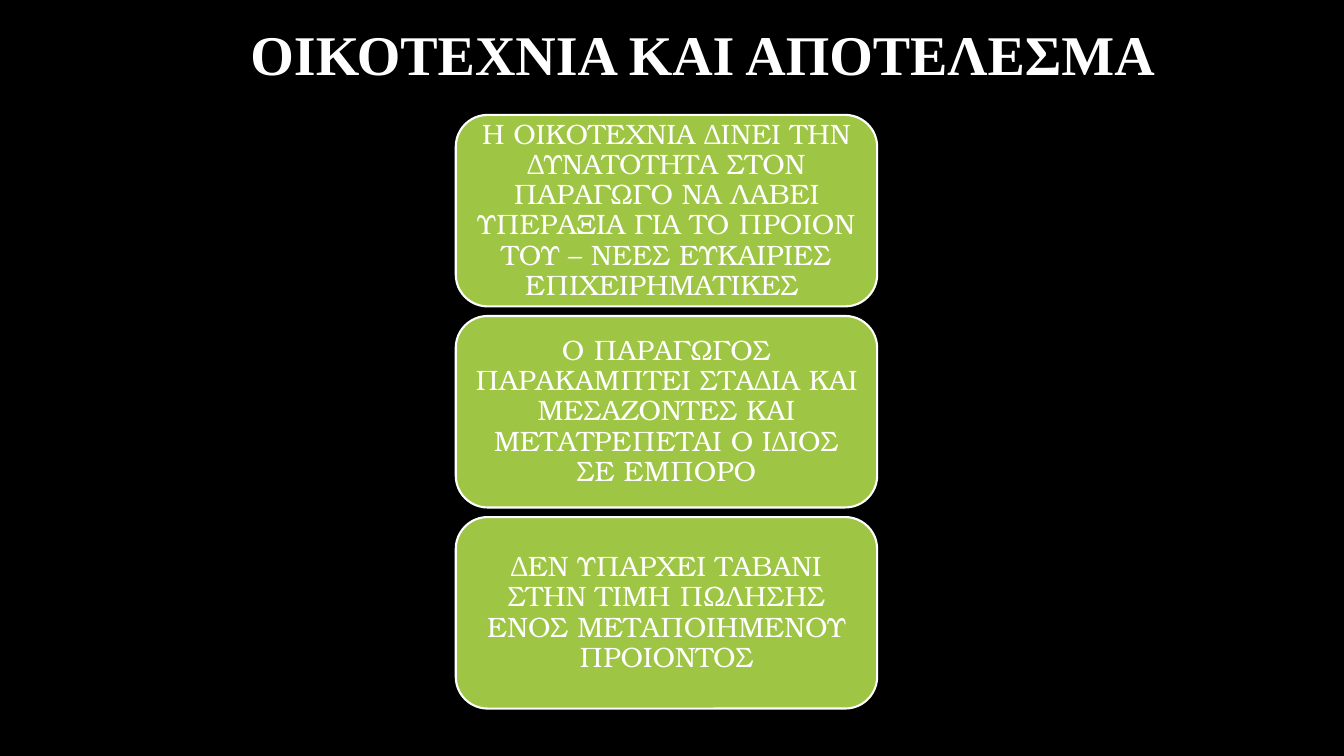
from dataclasses import dataclass
from pptx import Presentation
from pptx.dml.color import RGBColor as Rgb
from pptx.enum.shapes import MSO_SHAPE as Form
from pptx.enum.text import MSO_ANCHOR as Anchor, PP_ALIGN as Align
from pptx.util import Inches, Pt


@dataclass(frozen=True)
class Theme:
    back: Rgb = Rgb(0, 0, 0)
    ink: Rgb = Rgb(255, 255, 255)
    card: Rgb = Rgb(0x9E, 0xC5, 0x44)
    head_font: str = "Times New Roman"
    body_font: str = "TeX Gyre Bonum"
    head_size: int = 40
    body_size: int = 20
    edge: float = 1.5
    lead: float = 0.9


THEME = Theme()
WIDE, HIGH = 13.33, 7.5
TITLE = "ΟΙΚΟΤΕΧΝΙΑ ΚΑΙ ΑΠΟΤΕΛΕΣΜΑ"
CARDS = [
    "Η ΟΙΚΟΤΕΧΝΙΑ ΔΙΝΕΙ ΤΗΝ ΔΥΝΑΤΟΤΗΤΑ ΣΤΟΝ ΠΑΡΑΓΩΓΟ ΝΑ ΛΑΒΕΙ "
    "ΥΠΕΡΑΞΙΑ ΓΙΑ ΤΟ ΠΡΟΙΟΝ ΤΟΥ – ΝΕΕΣ ΕΥΚΑΙΡΙΕΣ ΕΠΙΧΕΙΡΗΜΑΤΙΚΕΣ ",
    "Ο ΠΑΡΑΓΩΓΟΣ ΠΑΡΑΚΑΜΠΤΕΙ ΣΤΑΔΙΑ ΚΑΙ ΜΕΣΑΖΟΝΤΕΣ ΚΑΙ "
    "ΜΕΤΑΤΡΕΠΕΤΑΙ Ο ΙΔΙΟΣ ΣΕ ΕΜΠΟΡΟ",
    "ΔΕΝ ΥΠΑΡΧΕΙ ΤΑΒΑΝΙ ΣΤΗΝ ΤΙΜΗ ΠΩΛΗΣΗΣ ΕΝΟΣ ΜΕΤΑΠΟΙΗΜΕΝΟΥ "
    "ΠΡΟΙΟΝΤΟΣ",
]


def write(shape, text, *, font, size, bold=False, pad=(0.1, 0.05)):
    frame = shape.text_frame
    frame.word_wrap = True
    frame.vertical_anchor = Anchor.MIDDLE
    frame.margin_left = frame.margin_right = Inches(pad[0])
    frame.margin_top = frame.margin_bottom = Inches(pad[1])
    para = frame.paragraphs[0]
    para.alignment = Align.CENTER
    para.line_spacing = THEME.lead
    run = para.add_run()
    run.text = text
    run.font.name = font
    run.font.size = Pt(size)
    run.font.bold = bold
    run.font.color.rgb = THEME.ink


def add_title(slide, box, text):
    shape = slide.shapes.add_textbox(*map(Inches, box))
    write(shape, text, font=THEME.head_font, size=THEME.head_size, bold=True)


def add_cards(slide, box, texts, gap=0.05):
    left, top, width, height = box
    tall = height / (len(texts) + gap * (len(texts) - 1))
    for row, text in enumerate(texts):
        place = left, top + row * tall * (1 + gap), width, tall
        card = slide.shapes.add_shape(Form.ROUNDED_RECTANGLE, *map(Inches, place))
        card.shadow.inherit = False
        card.fill.solid()
        card.fill.fore_color.rgb = THEME.card
        card.line.color.rgb = THEME.ink
        card.line.width = Pt(THEME.edge)
        write(card, text, font=THEME.body_font, size=THEME.body_size, pad=(0.08, 0.04))


def main():
    deck = Presentation()
    deck.slide_width, deck.slide_height = Inches(WIDE), Inches(HIGH)
    slide = deck.slides.add_slide(deck.slide_layouts[6])
    slide.background.fill.solid()
    slide.background.fill.fore_color.rgb = THEME.back
    add_title(slide, (1.22, 0, 11.5, 1.14), TITLE)
    add_cards(slide, (4.52, 1.14, 4.18, 5.89), CARDS)
    deck.save("out.pptx")


if __name__ == "__main__":
    main()
